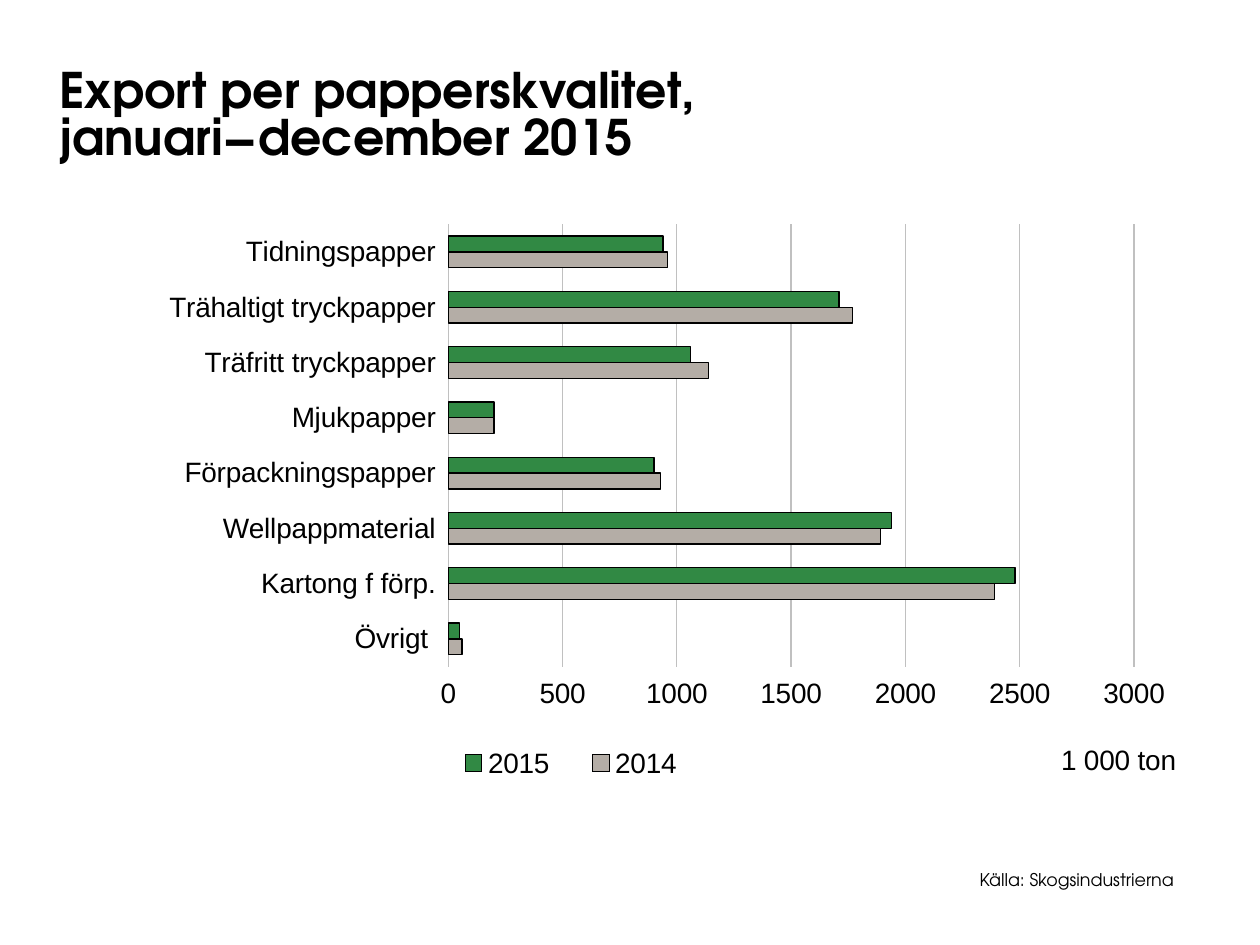
from lxml import etree
from pptx import Presentation
from pptx.chart.data import CategoryChartData
from pptx.dml.color import RGBColor
from pptx.enum.chart import XL_CHART_TYPE, XL_LEGEND_POSITION, XL_TICK_MARK
from pptx.enum.text import MSO_ANCHOR
from pptx.oxml.ns import qn
from pptx.util import Cm, Pt

BAR = XL_CHART_TYPE.BAR_CLUSTERED
RIGHT = XL_LEGEND_POSITION.RIGHT
OUTSIDE = XL_TICK_MARK.OUTSIDE
BOTTOM, MIDDLE = MSO_ANCHOR.BOTTOM, MSO_ANCHOR.MIDDLE

COLORS = {"text": "000000", "grid": "C0C0C0", "2014": "B4ADA6", "2015": "318944"}
rgb = {name: RGBColor.from_string(value) for name, value in COLORS.items()}


def set_font(font, **values):
    for name, value in values.items():
        setattr(font, name, value)
    font.color.rgb = rgb["text"]


def add_layout(parent, before, **values):
    """Place a chart part by fractions of the chart area."""
    for old in parent.findall(qn("c:layout")):
        parent.remove(old)
    layout = etree.Element(qn("c:layout"))
    manual = etree.SubElement(layout, qn("c:manualLayout"))
    for name, value in values.items():
        etree.SubElement(manual, qn("c:" + name)).set("val", str(value))
    following = parent.find(qn(before))
    following.addprevious(layout)


prs = Presentation()
prs.slide_width, prs.slide_height = Cm(25.4), Cm(19.05)
s = prs.slides.add_slide(prs.slide_layouts[6])

# Title and source line
texts = [
    {"text": "Export per papperskvalitet, januari−december 2015",
     "box": (1.2, 0.13, 21.59, 3.2), "size": 28, "bold": True,
     "anchor": BOTTOM, "inset": 0, "spacing": 0.8},
    {"text": "Källa: Skogsindustrierna",
     "box": (19.5, 17.27, 4.93, 0.94), "size": 10, "bold": False,
     "anchor": MIDDLE, "inset": 0.25, "spacing": 1},
]
for t in texts:
    tf = s.shapes.add_textbox(*[Cm(v) for v in t["box"]]).text_frame
    frame = {"word_wrap": True, "vertical_anchor": t["anchor"],
             "margin_left": Cm(t["inset"]), "margin_right": Cm(t["inset"]),
             "margin_top": 0, "margin_bottom": 0}
    for name, value in frame.items():
        setattr(tf, name, value)
    p = tf.paragraphs[0]
    p.line_spacing = t["spacing"]
    r = p.add_run()
    r.text = t["text"]
    set_font(r.font, name="TeX Gyre Adventor", size=Pt(t["size"]), bold=t["bold"])

# Chart data, listed from the bottom bar upwards
data = CategoryChartData(number_format="0")
data.categories = ["Övrigt ", "Kartong f förp.", "Wellpappmaterial",
                   "Förpackningspapper", "Mjukpapper", "Träfritt tryckpapper",
                   "Trähaltigt tryckpapper", "Tidningspapper"]
data.add_series("2014", [60, 2390, 1890, 930, 200, 1140, 1770, 960])
data.add_series("2015", [50, 2480, 1940, 900, 200, 1060, 1710, 940])
chart = s.shapes.add_chart(BAR, Cm(1.73), Cm(4.11), Cm(22.48), Cm(11.81), data).chart
chart_font = {"name": "Arial", "size": Pt(16), "bold": False}
set_font(chart.font, **chart_font)
chart.has_title = False

# Bars
plot = chart.plots[0]
plot.gap_width, plot.overlap = 150, 0
plot.vary_by_categories = False
for series in plot.series:
    series.invert_if_negative = False
    series.format.fill.solid()
    series.format.fill.fore_color.rgb = rgb[series.name]
    series.format.line.color.rgb = rgb["text"]
    series.format.line.width = Pt(0.75)
plot_area = chart.plots[0]._element.getparent()
add_layout(plot_area, "c:barChart", layoutTarget="inner", xMode="edge",
           yMode="edge", x=0.325, y=0.035, w=0.615, h=0.755)

# Axes
for axis in (chart.category_axis, chart.value_axis):
    axis.major_tick_mark = OUTSIDE
    axis.format.line.fill.background()
    set_font(axis.tick_labels.font, **chart_font)
axis = chart.value_axis
axis.minimum_scale, axis.maximum_scale, axis.major_unit = 0, 3000, 500
axis.tick_labels.number_format = "0"
axis.tick_labels.number_format_is_linked = False
axis.major_gridlines.format.line.color.rgb = rgb["grid"]
axis.major_gridlines.format.line.width = Pt(0.75)

# Unit under the value axis
title = axis.axis_title
r = title.text_frame.paragraphs[0].add_run()
r.text = "1 000 ton"
set_font(r.font, **chart_font)
add_layout(title._element, "c:overlay", xMode="edge", yMode="edge", x=0.87, y=0.91)

# Legend
chart.has_legend = True
legend = chart.legend
legend.position = RIGHT
legend.include_in_layout = False
set_font(legend.font, **chart_font)
add_layout(legend._element, "c:overlay", xMode="edge", yMode="edge",
           x=0.31, y=0.92, w=0.25, h=0.07)

prs.save("out.pptx")
